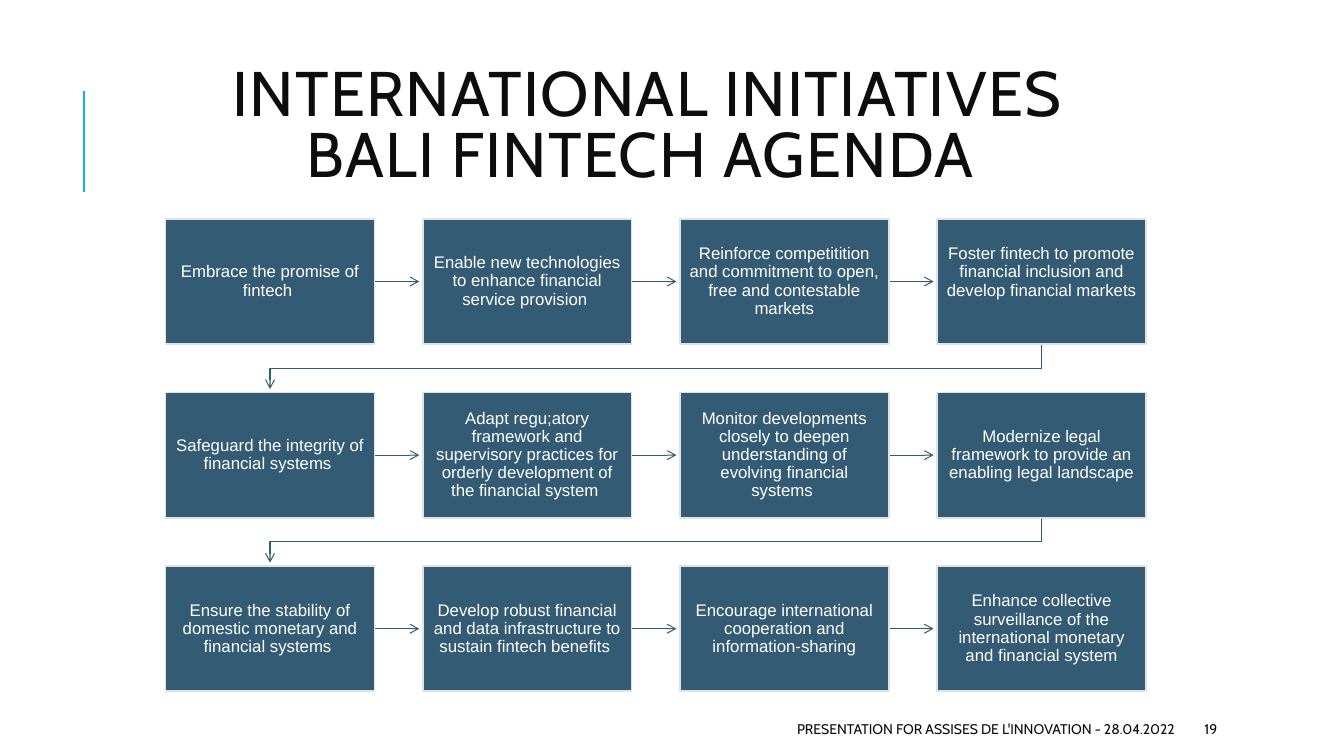
from lxml import etree
from pptx import Presentation
from pptx.dml.color import RGBColor
from pptx.enum.shapes import MSO_CONNECTOR, MSO_SHAPE
from pptx.enum.text import MSO_ANCHOR, PP_ALIGN
from pptx.oxml.ns import qn
from pptx.util import Pt

STRAIGHT = MSO_CONNECTOR.STRAIGHT
RECTANGLE = MSO_SHAPE.RECTANGLE
MIDDLE = MSO_ANCHOR.MIDDLE
LEFT, CENTER, RIGHT = PP_ALIGN.LEFT, PP_ALIGN.CENTER, PP_ALIGN.RIGHT

COLORS = {
    "accent": "1CADE4",
    "card": "335B74",
    "border": "DFE3E5",
    "ink": "0D0D0D",
    "white": "FFFFFF",
}


def write(box, lines, font, size, color, align, spacing=1.0, tracking=0):
    """Put lines, parted by line breaks, in one paragraph of a box."""
    frame = box.text_frame
    frame.word_wrap = True
    frame.vertical_anchor = MIDDLE
    para = frame.paragraphs[0]
    para.alignment = align
    para.line_spacing = spacing
    for index, line in enumerate(lines):
        if index:
            para.add_line_break()
        span = para.add_run()
        span.text = line
        span.font.name = font
        span.font.size = Pt(size)
        span.font.color.rgb = RGBColor.from_string(COLORS[color])
        if tracking:
            span.font._element.set("spc", str(tracking))


def style_line(shape, color, width, arrow=False):
    """Colour a line, remove its shadow and optionally add an arrowhead."""
    shape.line.color.rgb = RGBColor.from_string(COLORS[color])
    shape.line.width = Pt(width)
    properties = shape._element.spPr
    if arrow:
        outline = properties.find(qn("a:ln"))
        etree.SubElement(outline, qn("a:tailEnd"), type="arrow")
    if properties.find(qn("a:effectLst")) is None:
        etree.SubElement(properties, qn("a:effectLst"))


deck = Presentation()
deck.slide_width, deck.slide_height = Pt(960), Pt(540)
page = deck.slides.add_slide(deck.slide_layouts[6])
shapes = page.shapes

# Title with accent rule
rule = shapes.add_connector(STRAIGHT, Pt(60), Pt(137), Pt(60), Pt(65))
style_line(rule, "accent", 1.5)
title = shapes.add_textbox(Pt(85.7), Pt(46), Pt(765.4), Pt(92.2))
write(title, ["INTERNATIONAL INITIATIVES ", "BALI FINTECH AGENDA  "],
      "Cabin", 45, "ink", CENTER, 0.8, 100)

# Agenda steps, read row by row
STEPS = [
    "Embrace the promise of fintech ",
    "Enable new technologies to enhance financial service provision ",
    "Reinforce competitition and commitment to open, free and contestable markets",
    "Foster fintech to promote financial inclusion and develop financial markets  ",
    "Safeguard the integrity of financial systems ",
    "Adapt regu;atory framework and supervisory practices for orderly "
    "development of the financial system ",
    "Monitor developments closely to deepen understanding of evolving financial systems ",
    "Modernize legal framework to provide an enabling legal landscape",
    "Ensure the stability of domestic monetary and financial systems ",
    "Develop robust financial and data infrastructure to sustain fintech benefits ",
    "Encourage international cooperation and information-sharing",
    "Enhance collective surveillance of the international monetary and financial system",
]
COLUMNS = 4
GRID_LEFT, GRID_TOP = 118.3, 156.4
CARD_WIDTH, CARD_HEIGHT = 149.2, 89.4
STEP_X, STEP_Y = 183.7, 124
ARROW_GAP = 2.5

for index, step in enumerate(STEPS):
    row, column = divmod(index, COLUMNS)
    left = GRID_LEFT + column * STEP_X
    top = GRID_TOP + row * STEP_Y
    bottom = top + CARD_HEIGHT

    # Arrow to the next step
    if column < COLUMNS - 1:
        middle = top + CARD_HEIGHT / 2
        arrow = shapes.add_connector(
            STRAIGHT, Pt(left + CARD_WIDTH), Pt(middle),
            Pt(left + STEP_X - ARROW_GAP), Pt(middle))
        style_line(arrow, "card", 0.75, arrow=True)
    elif index < len(STEPS) - 1:
        start_x = left + CARD_WIDTH / 2
        end_x = GRID_LEFT + CARD_WIDTH / 2
        turn_y = (bottom + top + STEP_Y) / 2
        end_y = top + STEP_Y - ARROW_GAP
        builder = shapes.build_freeform(Pt(start_x), Pt(bottom))
        corners = [(start_x, turn_y), (end_x, turn_y), (end_x, end_y)]
        builder.add_line_segments([(Pt(x), Pt(y)) for x, y in corners], close=False)
        arrow = builder.convert_to_shape()
        arrow.fill.background()
        style_line(arrow, "card", 0.75, arrow=True)

    # Card
    card = shapes.add_shape(RECTANGLE, Pt(left), Pt(top), Pt(CARD_WIDTH), Pt(CARD_HEIGHT))
    card.shadow.inherit = False
    card.fill.solid()
    card.fill.fore_color.rgb = RGBColor.from_string(COLORS["card"])
    style_line(card, "border", 1.25)
    frame = card.text_frame
    frame.margin_left = frame.margin_right = Pt(6.5)
    frame.margin_top = frame.margin_bottom = Pt(6.5)
    write(card, [step], "Arial", 12, "white", CENTER, 0.9)

# Footer and page number
footer = shapes.add_textbox(Pt(381.6), Pt(509.8), Pt(464.4), Pt(21.6))
write(footer, ["PRESENTATION FOR ASSISES DE L'INNOVATION - 28.04.2022"],
      "Cabin", 10, "ink", RIGHT)
number = shapes.add_textbox(Pt(853.2), Pt(509.8), Pt(76.3), Pt(21.6))
write(number, ["19"], "Cabin", 10, "ink", LEFT)

deck.save("out.pptx")
